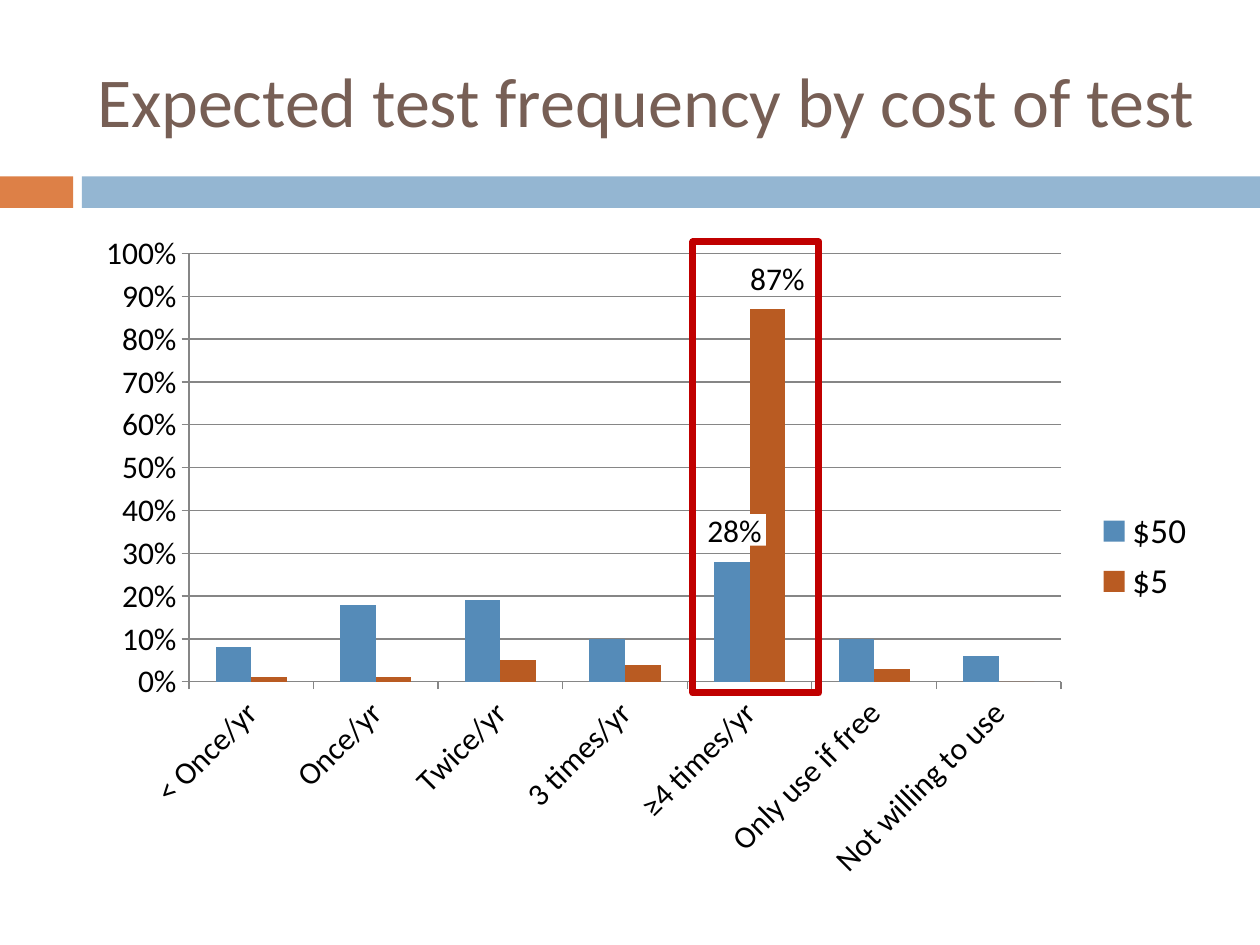
import pptx
import pptx.chart.data
import pptx.dml.color
import pptx.enum.chart
import pptx.enum.shapes
import pptx.enum.text
import pptx.oxml
import pptx.oxml.ns
import pptx.util
from dataclasses import dataclass

Inches = pptx.util.Inches
Pt = pptx.util.Pt


@dataclass(frozen=True)
class Theme:
    font: str = "Calibri"
    title: str = "775F55"
    text: str = "000000"
    paper: str = "FFFFFF"
    accent: str = "DD8047"
    band: str = "94B6D2"
    grid: str = "868686"
    highlight: str = "C00000"
    title_size: int = 40
    legend_size: int = 20
    label_size: int = 18


THEME = Theme()
TITLE = "Expected test frequency by cost of test"
FREQUENCIES = ["< Once/yr", "Once/yr", "Twice/yr", "3 times/yr", "≥4 times/yr",
               "Only use if free", "Not willing to use"]
COSTS = [
    ("$50", [0.08, 0.18, 0.19, 0.1, 0.28, 0.1, 0.06], "558BB8"),
    ("$5", [0.01, 0.01, 0.05, 0.04, 0.87, 0.03, 0], "B95B22"),
]
BANDS = [((0, 1.4, 0.58, 0.25), THEME.accent), ((0.65, 1.4, 9.35, 0.25), THEME.band)]
TITLE_BOX = (0.67, 0.25, 8.92, 1.08)
CHART_BOX = (0.67, 1.75, 8.92, 5.33)
PLOT_SHARE = {"x": 0.093, "y": 0.049, "w": 0.776, "h": 0.638}
HIGHLIGHT_BOX = (5.5, 1.92, 1, 3.58)
CALLOUTS = [("87%", (5.92, 2.08, 0.5, 0.25)), ("28%", (5.58, 4.08, 0.5, 0.25))]


def rgb(color):
    return pptx.dml.color.RGBColor.from_string(color)


def style_font(font, size, color=THEME.text):
    font.name = THEME.font
    font.size = Pt(size)
    font.bold = False
    font.color.rgb = rgb(color)


def add_box(slide, box, fill=None):
    rectangle = slide.shapes.add_shape(
        pptx.enum.shapes.MSO_SHAPE.RECTANGLE, *map(Inches, box))
    rectangle.shadow.inherit = False
    rectangle.line.fill.background()
    if fill:
        rectangle.fill.solid()
        rectangle.fill.fore_color.rgb = rgb(fill)
    else:
        rectangle.fill.background()
    return rectangle


def add_title(slide):
    title = slide.shapes.title
    title.left, title.top, title.width, title.height = map(Inches, TITLE_BOX)
    frame = title.text_frame
    frame.text = TITLE
    frame.auto_size = pptx.enum.text.MSO_AUTO_SIZE.NONE
    frame.vertical_anchor = pptx.enum.text.MSO_ANCHOR.MIDDLE
    frame.margin_right = 0
    frame.paragraphs[0].alignment = pptx.enum.text.PP_ALIGN.LEFT
    style_font(frame.paragraphs[0].font, THEME.title_size, THEME.title)


def place_plot(chart):
    plot_area = chart.plots[0]._element.getparent()
    for layout in plot_area.findall(pptx.oxml.ns.qn("c:layout")):
        plot_area.remove(layout)
    shares = "".join(f'<c:{side} val="{share}"/>' for side, share in PLOT_SHARE.items())
    plot_area.insert(0, pptx.oxml.parse_xml(
        f'<c:layout {pptx.oxml.ns.nsdecls("c")}><c:manualLayout>'
        '<c:layoutTarget val="inner"/><c:xMode val="edge"/><c:yMode val="edge"/>'
        f'{shares}</c:manualLayout></c:layout>'))


def add_frequency_chart(slide):
    frequency_data = pptx.chart.data.CategoryChartData(number_format="0%")
    frequency_data.categories = FREQUENCIES
    for cost, shares, _ in COSTS:
        frequency_data.add_series(cost, shares)
    chart = slide.shapes.add_chart(
        pptx.enum.chart.XL_CHART_TYPE.COLUMN_CLUSTERED,
        *map(Inches, CHART_BOX), frequency_data).chart
    chart.has_title = False
    style_font(chart.font, THEME.label_size)

    bars = chart.plots[0]
    bars.gap_width = 150
    bars.overlap = 0
    bars.vary_by_categories = False
    for series, (_, _, color) in zip(bars.series, COSTS):
        series.format.fill.solid()
        series.format.fill.fore_color.rgb = rgb(color)

    for axis in (chart.category_axis, chart.value_axis):
        axis.major_tick_mark = pptx.enum.chart.XL_TICK_MARK.OUTSIDE
        axis.minor_tick_mark = pptx.enum.chart.XL_TICK_MARK.NONE
        axis.format.line.color.rgb = rgb(THEME.grid)
        style_font(axis.tick_labels.font, THEME.label_size)
    slant = chart.category_axis._element.find(pptx.oxml.ns.qn("c:txPr"))
    slant.find(pptx.oxml.ns.qn("a:bodyPr")).set("rot", "-2700000")

    share_axis = chart.value_axis
    share_axis.minimum_scale, share_axis.maximum_scale = 0, 1
    share_axis.major_unit = 0.1
    share_axis.tick_labels.number_format = "0%"
    share_axis.tick_labels.number_format_is_linked = False
    share_axis.has_major_gridlines = True
    share_axis.major_gridlines.format.line.color.rgb = rgb(THEME.grid)

    chart.has_legend = True
    chart.legend.position = pptx.enum.chart.XL_LEGEND_POSITION.RIGHT
    chart.legend.include_in_layout = False
    style_font(chart.legend.font, THEME.legend_size)
    place_plot(chart)


def add_callout(slide, share, box):
    frame = add_box(slide, box, THEME.paper).text_frame
    frame.margin_left = frame.margin_right = frame.margin_top = frame.margin_bottom = 0
    frame.vertical_anchor = pptx.enum.text.MSO_ANCHOR.MIDDLE
    frame.text = share
    frame.paragraphs[0].alignment = pptx.enum.text.PP_ALIGN.CENTER
    style_font(frame.paragraphs[0].font, THEME.label_size)


def main():
    deck = pptx.Presentation()
    deck.slide_width, deck.slide_height = Inches(10), Inches(7.5)
    slide = deck.slides.add_slide(deck.slide_layouts.get_by_name("Title Only"))
    for box, color in BANDS:
        add_box(slide, box, color)
    add_title(slide)
    add_frequency_chart(slide)
    highlight = add_box(slide, HIGHLIGHT_BOX)
    highlight.line.color.rgb = rgb(THEME.highlight)
    highlight.line.width = Pt(4)
    for share, box in CALLOUTS:
        add_callout(slide, share, box)
    deck.save("out.pptx")


if __name__ == "__main__":
    main()
